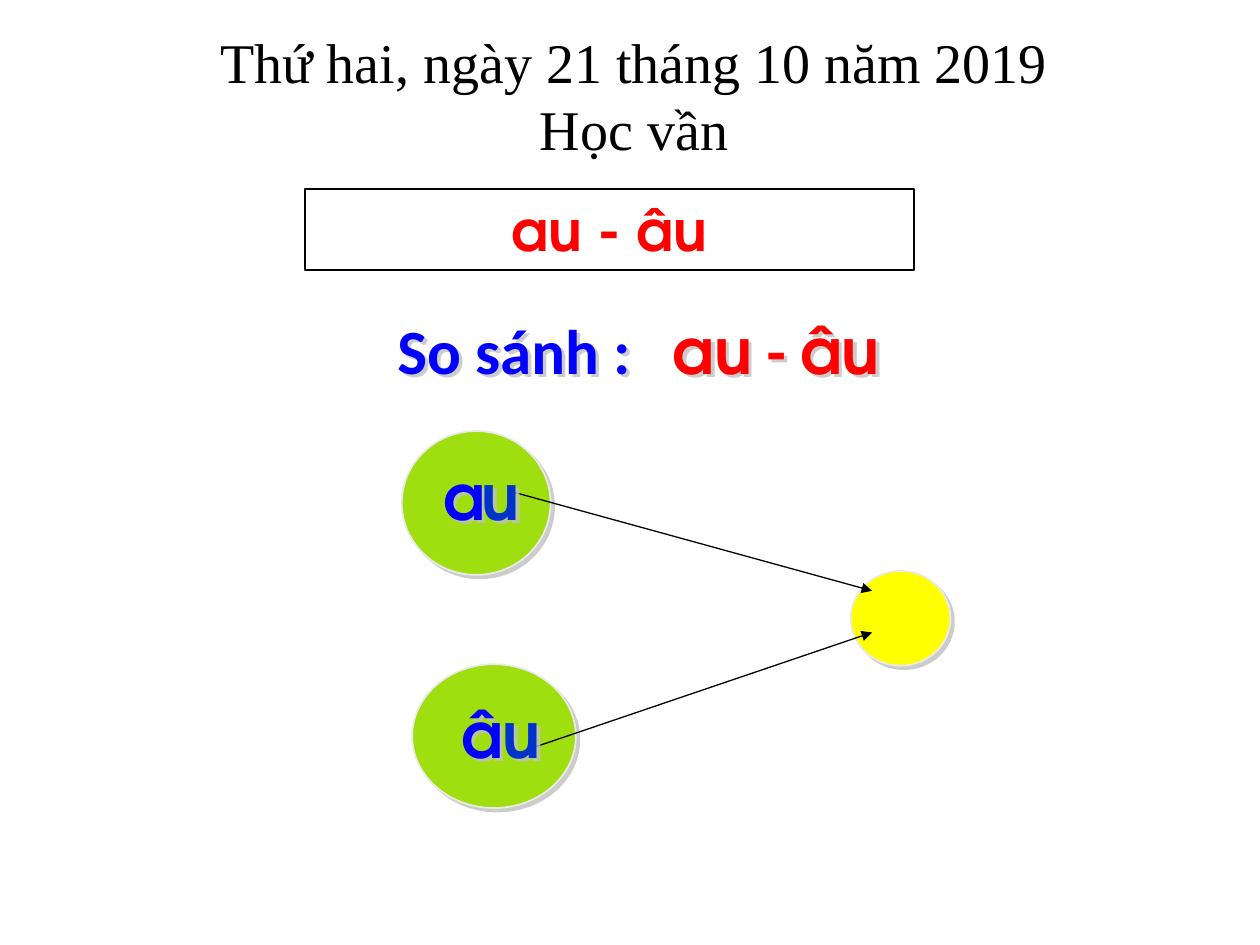
import pptx
import pptx.util
import pptx.dml.color
import pptx.enum.shapes
import pptx.enum.text
import pptx.oxml
import pptx.oxml.ns

Cm = pptx.util.Cm
Pt = pptx.util.Pt
SHAPE = pptx.enum.shapes.MSO_SHAPE
HEADING_FONT = "Times New Roman"
LABEL_FONT = "Calibri"
RHYME_FONT = "TeX Gyre Adventor"
RED, BLUE, DARK_BLUE, BLACK = "FF0000", "0000FF", "0033CC", "000000"
GREEN, YELLOW, PALE_GREY = "9FDF0F", "FFFF00", "EAEAEA"


def rgb(value):
    return pptx.dml.color.RGBColor.from_string(value)


def parse_drawing(xml):
    ns = pptx.oxml.ns.nsdecls("a")
    return pptx.oxml.parse_xml(xml.replace(">", f" {ns}>", 1))


def add_shadow(sp):
    sp.shadow.inherit = False
    effects = sp._element.spPr.find(pptx.oxml.ns.qn("a:effectLst"))
    effects.append(parse_drawing(
        '<a:outerShdw dist="35921" dir="2700000" algn="ctr" rotWithShape="0">'
        '<a:srgbClr val="C0C0C0"><a:alpha val="80000"/></a:srgbClr></a:outerShdw>'))


def add_run(p, text, size=36, font=RHYME_FONT, color=BLUE, bold=True, spacing=0):
    r = p.add_run()
    r.text = text
    r.font.size = Pt(size)
    r.font.name = font
    r.font.bold = bold
    r.font.color.rgb = rgb(color)
    if spacing:
        r._r.get_or_add_rPr().set("spc", str(spacing))


def prepare_text(sp):
    tf = sp.text_frame
    tf.word_wrap = True
    tf.auto_size = pptx.enum.text.MSO_AUTO_SIZE.SHAPE_TO_FIT_TEXT
    tf.vertical_anchor = pptx.enum.text.MSO_ANCHOR.TOP
    tf.paragraphs[0].alignment = pptx.enum.text.PP_ALIGN.CENTER
    return tf


def add_text(s, left, top, width, height, shadow=True):
    sp = s.shapes.add_textbox(Cm(left), Cm(top), Cm(width), Cm(height))
    if shadow:
        add_shadow(sp)
    return prepare_text(sp)


def add_circle(s, left, top, width, height, fill):
    sp = s.shapes.add_shape(SHAPE.OVAL, Cm(left), Cm(top), Cm(width), Cm(height))
    sp.fill.solid()
    sp.fill.fore_color.rgb = rgb(fill)
    sp.line.color.rgb = rgb(PALE_GREY)
    sp.line.width = Pt(1)
    add_shadow(sp)


def add_arrow(s, x1, y1, x2, y2):
    line = s.shapes.add_connector(
        pptx.enum.shapes.MSO_CONNECTOR.STRAIGHT, Cm(x1), Cm(y1), Cm(x2), Cm(y2))
    line.line.color.rgb = rgb(BLACK)
    line.line.width = Pt(0.75)
    line.line._get_or_add_ln().append(parse_drawing('<a:tailEnd type="triangle"></a:tailEnd>'))
    line._element.spPr.append(parse_drawing("<a:effectLst></a:effectLst>"))


def add_letter(s, text, left, top, width, color):
    tf = add_text(s, left, top, width, 1.78)
    add_run(tf.paragraphs[0], text, color=color)


def add_heading(s):
    tf = add_text(s, 1.9, 0.43, 21.77, 3, shadow=False)
    for i, text in enumerate(["Thứ hai, ngày 21 tháng 10 năm 2019", "Học vần"]):
        p = tf.add_paragraph() if i else tf.paragraphs[0]
        p.alignment = pptx.enum.text.PP_ALIGN.CENTER
        add_run(p, text, size=32, font=HEADING_FONT, color=BLACK, bold=False)


def add_lesson_box(s):
    sp = s.shapes.add_shape(SHAPE.RECTANGLE, Cm(6.15), Cm(3.81), Cm(12.27), Cm(1.63))
    sp.shadow.inherit = False
    sp.fill.background()
    sp.line.color.rgb = rgb(BLACK)
    sp.line.width = Pt(1)
    add_run(prepare_text(sp).paragraphs[0], "au - âu", size=32, color=RED)


def add_comparison(s):
    p = add_text(s, 6.99, 6.15, 11.76, 1.78).paragraphs[0]
    add_run(p, "So sánh :", font=LABEL_FONT)
    add_run(p, " ", font=LABEL_FONT, spacing=1600)
    add_run(p, "au", color=RED)
    add_run(p, " - ", font=LABEL_FONT, color=RED)
    add_run(p, "âu", color=RED)


def main():
    prs = pptx.Presentation()
    prs.slide_width, prs.slide_height = Cm(25.4), Cm(19.05)
    s = prs.slides.add_slide(prs.slide_layouts[6])

    add_circle(s, 8.31, 13.39, 3.3, 2.9, GREEN)
    add_circle(s, 8.1, 8.69, 3, 2.9, GREEN)
    add_circle(s, 17.15, 11.51, 2.01, 1.91, YELLOW)
    add_comparison(s)
    add_letter(s, "a", 8.69, 9.09, 1.22, BLUE)
    add_letter(s, "â", 8.89, 13.89, 1.65, BLUE)
    add_arrow(s, 10.31, 9.91, 17.58, 11.91)
    add_arrow(s, 10.69, 15.09, 17.58, 12.75)
    add_letter(s, "u", 9.19, 9.09, 1.8, DARK_BLUE)
    add_letter(s, "u", 9.6, 13.89, 1.83, DARK_BLUE)
    add_lesson_box(s)
    add_heading(s)
    prs.save("out.pptx")


if __name__ == "__main__":
    main()
